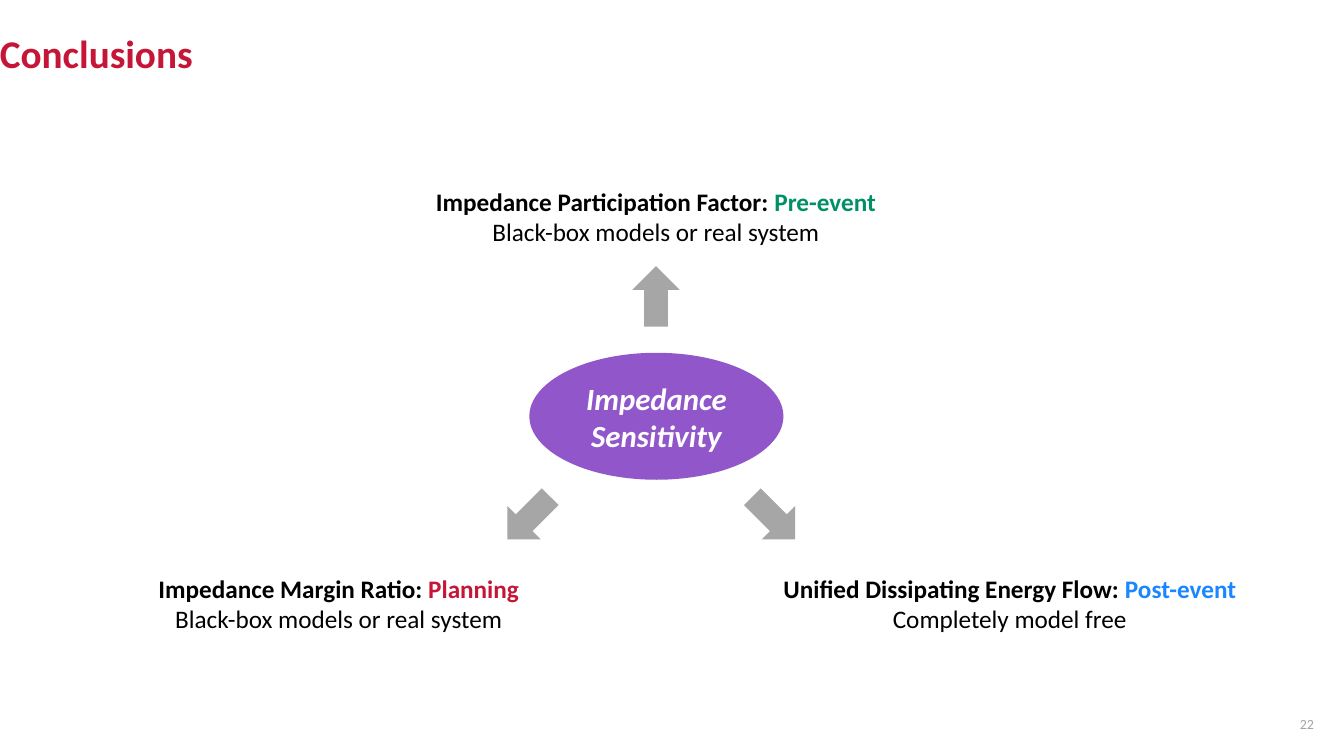
from dataclasses import dataclass

from pptx import Presentation
from pptx.dml.color import RGBColor
from pptx.enum.shapes import MSO_SHAPE
from pptx.enum.text import MSO_ANCHOR, PP_ALIGN
from pptx.shapes.autoshape import Shape
from pptx.slide import Slide
from pptx.text.text import TextFrame, _Paragraph
from pptx.util import Inches, Pt

FONT = "Calibri"
BLACK = RGBColor(0x00, 0x00, 0x00)
WHITE = RGBColor(0xFF, 0xFF, 0xFF)
RED = RGBColor(0xC5, 0x16, 0x38)
GREEN = RGBColor(0x00, 0x90, 0x67)
BLUE = RGBColor(0x1A, 0x86, 0xFF)
PURPLE = RGBColor(0x91, 0x57, 0xCA)
ARROW_GRAY = RGBColor(0xA6, 0xA6, 0xA6)
NUMBER_GRAY = RGBColor(0xA2, 0xA4, 0xA4)

OVAL, DOWN_ARROW = MSO_SHAPE.OVAL, MSO_SHAPE.DOWN_ARROW
LEFT, CENTER, RIGHT = PP_ALIGN.LEFT, PP_ALIGN.CENTER, PP_ALIGN.RIGHT
TOP, MIDDLE = MSO_ANCHOR.TOP, MSO_ANCHOR.MIDDLE

ARROW_WIDTH, ARROW_HEIGHT = 0.47, 0.6
METHOD_HEIGHT = 0.71


@dataclass(frozen=True)
class Method:
    """One use of impedance sensitivity and the arrow leading to it."""
    name: str
    stage: str
    stage_color: RGBColor
    requirement: str
    left: float
    top: float
    width: float
    arrow_left: float
    arrow_top: float
    arrow_rotation: float


METHODS = [
    Method("Impedance Margin Ratio: ", "Planning", RED,
           "Black-box models or real system", 0.76, 5.64, 5.2, 5.01, 4.84, 45),
    Method("Unified Dissipating Energy Flow: ", "Post-event", BLUE,
           "Completely model free", 7.61, 5.64, 4.81, 7.44, 4.84, 315),
    Method("Impedance Participation Factor: ", "Pre-event", GREEN,
           "Black-box models or real system", 3.75, 1.8, 5.51, 6.27, 2.64, 180),
]


def add_text(paragraph: _Paragraph, text: str, *, size: float, color: RGBColor,
             bold: bool = False, italic: bool = False,
             align: PP_ALIGN = LEFT) -> None:
    paragraph.alignment = align
    run = paragraph.add_run()
    run.text = text
    font = run.font
    font.name, font.size, font.bold, font.italic = FONT, Pt(size), bold, italic
    font.color.rgb = color


def add_frame(slide: Slide, left: float, top: float, width: float,
              height: float, anchor: MSO_ANCHOR = TOP) -> TextFrame:
    frame = slide.shapes.add_textbox(
        Inches(left), Inches(top), Inches(width), Inches(height)).text_frame
    frame.word_wrap = True
    frame.vertical_anchor = anchor
    return frame


def add_filled(slide: Slide, kind: MSO_SHAPE, left: float, top: float,
               width: float, height: float, color: RGBColor) -> Shape:
    shape = slide.shapes.add_shape(
        kind, Inches(left), Inches(top), Inches(width), Inches(height))
    shape.shadow.inherit = False
    shape.fill.solid()
    shape.fill.fore_color.rgb = color
    shape.line.fill.background()
    return shape


def add_method(slide: Slide, method: Method) -> None:
    frame = add_frame(slide, method.left, method.top, method.width, METHOD_HEIGHT)
    heading = frame.paragraphs[0]
    add_text(heading, method.name, size=18, color=BLACK, bold=True, align=CENTER)
    add_text(heading, method.stage, size=18, color=method.stage_color,
             bold=True, align=CENTER)
    add_text(frame.add_paragraph(), method.requirement, size=18, color=BLACK,
             align=CENTER)
    arrow = add_filled(slide, DOWN_ARROW, method.arrow_left, method.arrow_top,
                       ARROW_WIDTH, ARROW_HEIGHT, ARROW_GRAY)
    arrow.rotation = method.arrow_rotation


def main() -> None:
    deck = Presentation()
    deck.slide_width, deck.slide_height = Inches(13.33), Inches(7.5)
    slide = deck.slides.add_slide(deck.slide_layouts[6])

    # Title
    title = add_frame(slide, 0, 0.29, 13.33, 0.47, MIDDLE)
    title.margin_left = title.margin_right = 0
    title.margin_top = title.margin_bottom = 0
    add_text(title.paragraphs[0], "Conclusions", size=28, color=RED, bold=True)

    # Slide number
    number = add_frame(slide, 10.13, 6.98, 3, 0.4, MIDDLE)
    add_text(number.paragraphs[0], "22", size=10, color=NUMBER_GRAY, align=RIGHT)

    # Central concept
    concept = add_filled(slide, OVAL, 5.25, 3.5, 2.52, 1.26, PURPLE).text_frame
    concept.word_wrap = True
    concept.vertical_anchor = MIDDLE
    add_text(concept.paragraphs[0], "Impedance Sensitivity", size=22,
             color=WHITE, bold=True, italic=True, align=CENTER)

    # Methods around the concept
    for method in METHODS:
        add_method(slide, method)

    deck.save("out.pptx")


if __name__ == "__main__":
    main()
